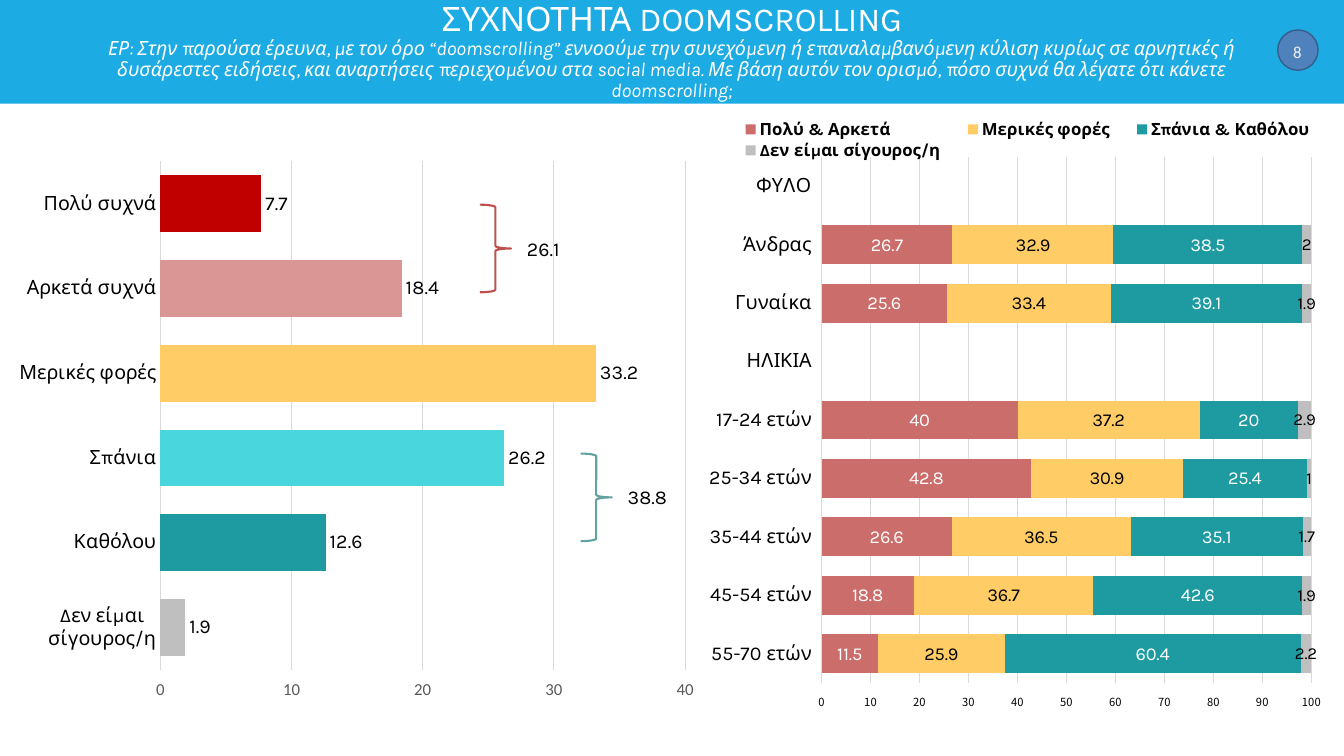
import pptx
import pptx.chart.data
import pptx.dml.color
import pptx.enum.chart
import pptx.enum.shapes
import pptx.enum.text
import pptx.oxml
import pptx.oxml.ns
import pptx.util

Pt = pptx.util.Pt
CHART = pptx.enum.chart
SHAPE = pptx.enum.shapes.MSO_SHAPE
TEXT = pptx.enum.text
TICKS = CHART.XL_TICK_LABEL_POSITION

BLACK, WHITE, GRID = "000000", "FFFFFF", "D9D9D9"
RED, YELLOW, TEAL, GREY = "CB6D6B", "FFCC66", "1D9BA1", "BFBFBF"


def rgb(value):
    return pptx.dml.color.RGBColor.from_string(value)


def assign(target, values):
    for name, value in values.items():
        setattr(target, name, value)


def paint(fill, color):
    fill.solid()
    fill.fore_color.rgb = rgb(color)


def place_inside(parent, index, box, inner=False):
    qn = pptx.oxml.ns.qn
    for old in parent.findall(qn("c:layout")):
        parent.remove(old)
    target = '<c:layoutTarget val="inner"/>' if inner else ""
    modes = '<c:xMode val="edge"/><c:yMode val="edge"/>'
    sizes = "".join(f'<c:{key} val="{value}"/>' for key, value in zip("xywh", box))
    parent.insert(index, pptx.oxml.parse_xml(
        f'<c:layout {pptx.oxml.ns.nsdecls("c")}><c:manualLayout>'
        f"{target}{modes}{sizes}</c:manualLayout></c:layout>"))


class Deck:
    face = "Karla"

    def __init__(self, width, height):
        self.presentation = pptx.Presentation()
        assign(self.presentation, {"slide_width": Pt(width), "slide_height": Pt(height)})
        self.slide = self.presentation.slides.add_slide(self.presentation.slide_layouts[5])

    def font(self, font, size, color=BLACK, **values):
        assign(font, {"size": Pt(size), "name": self.face, **values})
        font.color.rgb = rgb(color)

    def shape(self, kind, box, fill=None, line=None, weight=1.0, behind=False):
        shape = self.slide.shapes.add_shape(kind, *map(Pt, box))
        shape.shadow.inherit = False
        if fill:
            paint(shape.fill, fill)
        else:
            shape.fill.background()
        if line:
            shape.line.color.rgb = rgb(line)
            shape.line.width = Pt(weight)
        else:
            shape.line.fill.background()
        if behind:
            self.slide.shapes._spTree.insert(2, shape._element)

    def title(self, box, heading, question):
        title = self.slide.shapes.title
        assign(title, dict(zip(("left", "top", "width", "height"), map(Pt, box))))
        assign(title.text_frame, {
            "word_wrap": True, "auto_size": TEXT.MSO_AUTO_SIZE.NONE,
            "vertical_anchor": TEXT.MSO_ANCHOR.MIDDLE})
        paragraph = title.text_frame.paragraphs[0]
        assign(paragraph, {"alignment": TEXT.PP_ALIGN.CENTER, "line_spacing": 0.9})
        top = paragraph.add_run()
        top.text = heading
        self.font(top.font, 24, WHITE)
        paragraph.add_line_break()
        below = paragraph.add_run()
        below.text = question
        self.font(below.font, 14, WHITE, italic=True)

    def text(self, box, words, size, color=BLACK, align=TEXT.PP_ALIGN.LEFT,
             anchor=TEXT.MSO_ANCHOR.TOP, **values):
        frame = self.slide.shapes.add_textbox(*map(Pt, box)).text_frame
        assign(frame, {"word_wrap": True, "vertical_anchor": anchor})
        paragraph = frame.paragraphs[0]
        paragraph.alignment = align
        run = paragraph.add_run()
        run.text = words
        self.font(run.font, size, color, **values)

    def bars(self, kind, box, categories, series, plot_box, gap, overlap, maximum,
             names_at, tick_font):
        data = pptx.chart.data.CategoryChartData()
        data.categories = categories
        for name, values in series:
            data.add_series(name, values)
        chart = self.slide.shapes.add_chart(kind, *map(Pt, box), data).chart
        assign(chart, {"has_title": False, "has_legend": False})
        self.font(chart.font, 11)
        assign(chart.plots[0], {"gap_width": gap, "overlap": overlap, "vary_by_categories": False})
        shared = {"major_tick_mark": CHART.XL_TICK_MARK.NONE,
                  "minor_tick_mark": CHART.XL_TICK_MARK.NONE}
        answers, percent = chart.category_axis, chart.value_axis
        assign(answers, {**shared, "reverse_order": True, "has_major_gridlines": False,
                         "tick_label_position": names_at})
        assign(percent, {**shared, "minimum_scale": 0, "maximum_scale": maximum,
                         "major_unit": 10, "has_major_gridlines": True,
                         "tick_label_position": TICKS.HIGH})
        self.font(answers.tick_labels.font, 14)
        self.font(percent.tick_labels.font, **tick_font)
        for line in (answers.format.line, percent.major_gridlines.format.line):
            line.color.rgb = rgb(GRID)
            line.width = Pt(0.75)
        percent.format.line.fill.background()
        place_inside(chart._chartSpace.chart.plotArea, 0, plot_box, inner=True)
        return chart

    def labels(self, series, position, size, color=BLACK):
        assign(series.data_labels, {"show_value": True, "position": position})
        self.font(series.data_labels.font, size, color)

    def legend(self, chart, box):
        chart.has_legend = True
        assign(chart.legend, {"position": CHART.XL_LEGEND_POSITION.BOTTOM,
                              "include_in_layout": False})
        self.font(chart.legend.font, 12, bold=True)
        place_inside(chart.legend._element, 1, box)


def main():
    deck = Deck(960, 540)
    deck.shape(SHAPE.OVAL, (912.7, 21.4, 28.8, 28.8), "4F81BD", "385D8A", behind=True)
    deck.shape(SHAPE.RECTANGLE, (0, 0, 960, 74), "1CABE2", behind=True)
    deck.title((66, 5.4, 828, 63.4), "ΣΥΧΝΟΤΗΤΑ DOOMSCROLLING",
               "ΕΡ: Στην παρούσα έρευνα, με τον όρο “doomscrolling” εννοούμε την συνεχόμενη ή "
               "επαναλαμβανόμενη κύλιση κυρίως σε αρνητικές ή δυσάρεστες ειδήσεις, και "
               "αναρτήσεις περιεχομένου στα social media. Με βάση αυτόν τον ορισμό, πόσο συχνά "
               "θα λέγατε ότι κάνετε doomscrolling;")
    deck.text((893.5, 1.5, 66.5, 70.5), "8", 12, "F2F2F2", TEXT.PP_ALIGN.CENTER,
              TEXT.MSO_ANCHOR.MIDDLE, name="Calibri")

    answers = {"Πολύ συχνά": (7.7, "C00000"), "Αρκετά συχνά": (18.4, "D99694"),
               "Μερικές φορές": (33.2, YELLOW), "Σπάνια": (26.2, "49D6DD"),
               "Καθόλου": (12.6, TEAL), "Δεν είμαι σίγουρος/η": (1.9, GREY)}
    frequency = deck.bars(
        CHART.XL_CHART_TYPE.BAR_CLUSTERED, (7.6, 99, 522, 417), list(answers),
        [("Series 1", [value for value, _ in answers.values()])],
        (0.205, 0.039, 0.718, 0.871), 49, 0, 40, TICKS.NEXT_TO_AXIS,
        {"size": 12, "color": "595959", "name": "Calibri"})
    total = frequency.plots[0].series[0]
    for index, (_, color) in enumerate(answers.values()):
        paint(total.points[index].format.fill, color)
    deck.labels(total, CHART.XL_LABEL_POSITION.OUTSIDE_END, 14)

    for left, top, color, subtotal in ((342.7, 146.2, "C0504D", "26.1"),
                                       (414.7, 324, "62A39F", "38.8")):
        deck.shape(SHAPE.RIGHT_BRACE, (left, top, 22.3, 62.6), line=color, weight=1.5)
        deck.text((left + 26.6, top + 19.2, 66.2, 24.5), subtotal, 14)

    groups = ["ΦΥΛΟ", "Άνδρας", "Γυναίκα", "ΗΛΙΚΙΑ", "17-24 ετών", "25-34 ετών",
              "35-44 ετών", "45-54 ετών", "55-70 ετών"]
    shares = [
        ("Πολύ & Αρκετά", [None, 26.7, 25.6, None, 40, 42.8, 26.6, 18.8, 11.5], RED, 13, WHITE),
        ("Μερικές φορές", [None, 32.9, 33.4, None, 37.2, 30.9, 36.5, 36.7, 25.9], YELLOW, 13, BLACK),
        ("Σπάνια & Καθόλου", [None, 38.5, 39.1, None, 20, 25.4, 35.1, 42.6, 60.4], TEAL, 13, WHITE),
        ("Δεν είμαι σίγουρος/η", [None, 2, 1.9, None, 2.9, 1, 1.7, 1.9, 2.2], GREY, 12, BLACK)]
    demographics = deck.bars(
        CHART.XL_CHART_TYPE.BAR_STACKED, (498.8, 75.6, 461, 442.8), groups,
        [share[:2] for share in shares], (0.191, 0.083, 0.759, 0.848), 50, 100, 100,
        TICKS.LOW, {"size": 8, "name": "Noto Sans CJK TC"})
    for series, (_, _, color, size, ink) in zip(demographics.plots[0].series, shares):
        paint(series.format.fill, color)
        deck.labels(series, CHART.XL_LABEL_POSITION.CENTER, size, ink)
    deck.legend(demographics, (0.04, 0.02, 0.94, 0.07))
    deck.presentation.save("out.pptx")


if __name__ == "__main__":
    main()
